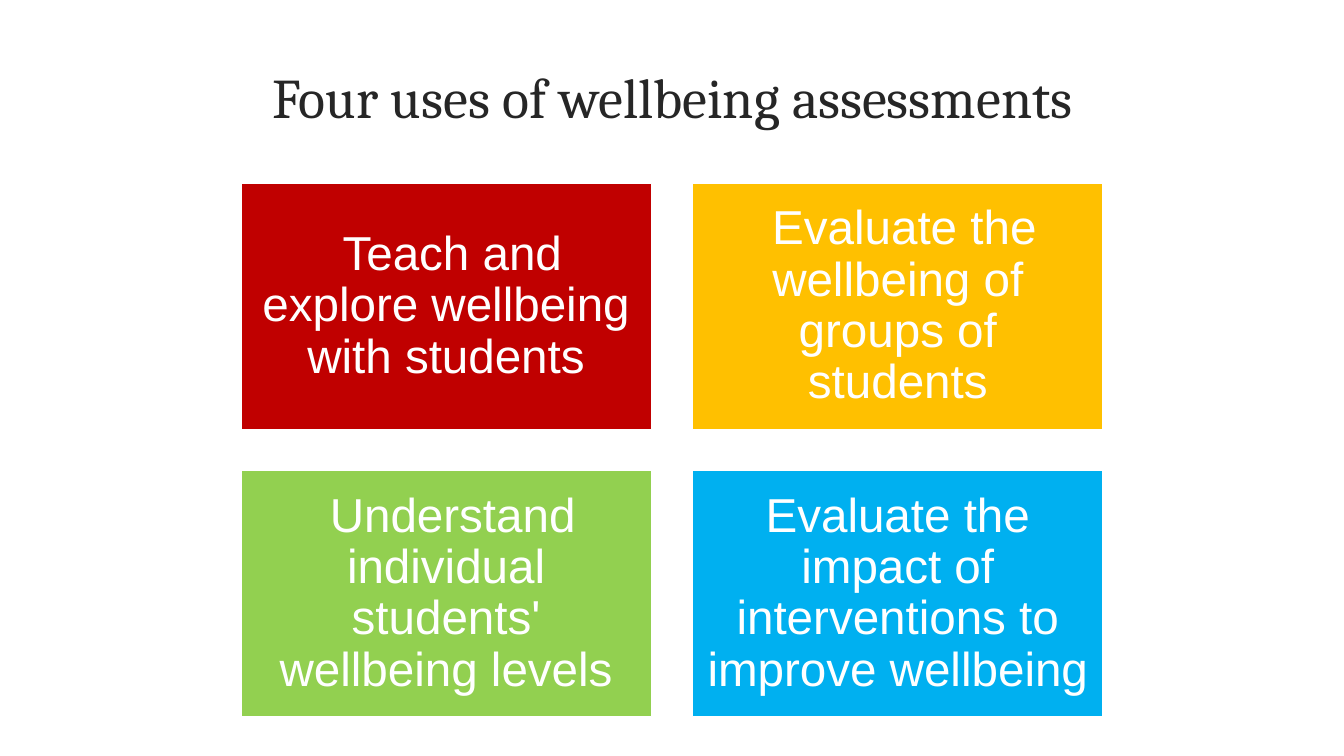
import dataclasses
import pptx
import pptx.dml.color
import pptx.enum.shapes
import pptx.enum.text
import pptx.util


@dataclasses.dataclass(frozen=True)
class Theme:
    ink: str = "262626"
    white: str = "FFFFFF"
    red: str = "C00000"
    gold: str = "FFC000"
    green: str = "92D050"
    blue: str = "00B0F0"
    head_font: str = "Cambria"
    body_font: str = "Arial"
    head_size: int = 40
    body_size: int = 34


def px(count):
    return pptx.util.Emu(count * 9144)


def rgb(code):
    return pptx.dml.color.RGBColor.from_string(code)


class Page:
    def __init__(self, deck, theme):
        self.theme = theme
        self.slide = deck.slides.add_slide(deck.slide_layouts[5])

    def label(self, shape, text, font, size, color, inset):
        frame = shape.text_frame
        frame.word_wrap = True
        frame.auto_size = pptx.enum.text.MSO_AUTO_SIZE.NONE
        frame.vertical_anchor = pptx.enum.text.MSO_ANCHOR.MIDDLE
        frame.margin_left = frame.margin_right = px(inset)
        frame.margin_top = frame.margin_bottom = px(inset)
        para = frame.paragraphs[0]
        para.alignment = pptx.enum.text.PP_ALIGN.CENTER
        para.line_spacing = 0.9
        run = para.add_run()
        run.text = text
        run.font.name = font
        run.font.size = pptx.util.Pt(size)
        run.font.color.rgb = rgb(color)

    def title(self, text, left, top, width, height):
        shape = self.slide.shapes.title
        shape.left, shape.top = px(left), px(top)
        shape.width, shape.height = px(width), px(height)
        style = self.theme
        self.label(shape, text, style.head_font, style.head_size, style.ink, 5)

    def card(self, text, fill, left, top, width, height):
        shape = self.slide.shapes.add_shape(
            pptx.enum.shapes.MSO_SHAPE.RECTANGLE,
            px(left), px(top), px(width), px(height))
        style = self.theme
        shape.shadow.inherit = False
        shape.fill.solid()
        shape.fill.fore_color.rgb = rgb(fill)
        shape.line.color.rgb = rgb(style.white)
        shape.line.width = pptx.util.Pt(1)
        self.label(shape, text, style.body_font, style.body_size, style.white, 14)


def main():
    deck = pptx.Presentation()
    deck.slide_width, deck.slide_height = px(1333), px(750)
    theme = Theme()
    page = Page(deck, theme)
    page.title("Four uses of wellbeing assessments", 31, 60, 1272, 79)
    cards = [
        (" Teach and explore wellbeing with students", theme.red),
        (" Evaluate the wellbeing of groups of students", theme.gold),
        (" Understand individual students' wellbeing levels", theme.green),
        ("Evaluate the impact of interventions to improve wellbeing", theme.blue),
    ]
    width, height, gap = 407, 244, 41
    for index, (text, fill) in enumerate(cards):
        row, col = divmod(index, 2)
        left = 239 + col * (width + gap)
        top = 182 + row * (height + gap)
        page.card(text, fill, left, top, width, height)
    deck.save("out.pptx")


if __name__ == "__main__":
    main()
